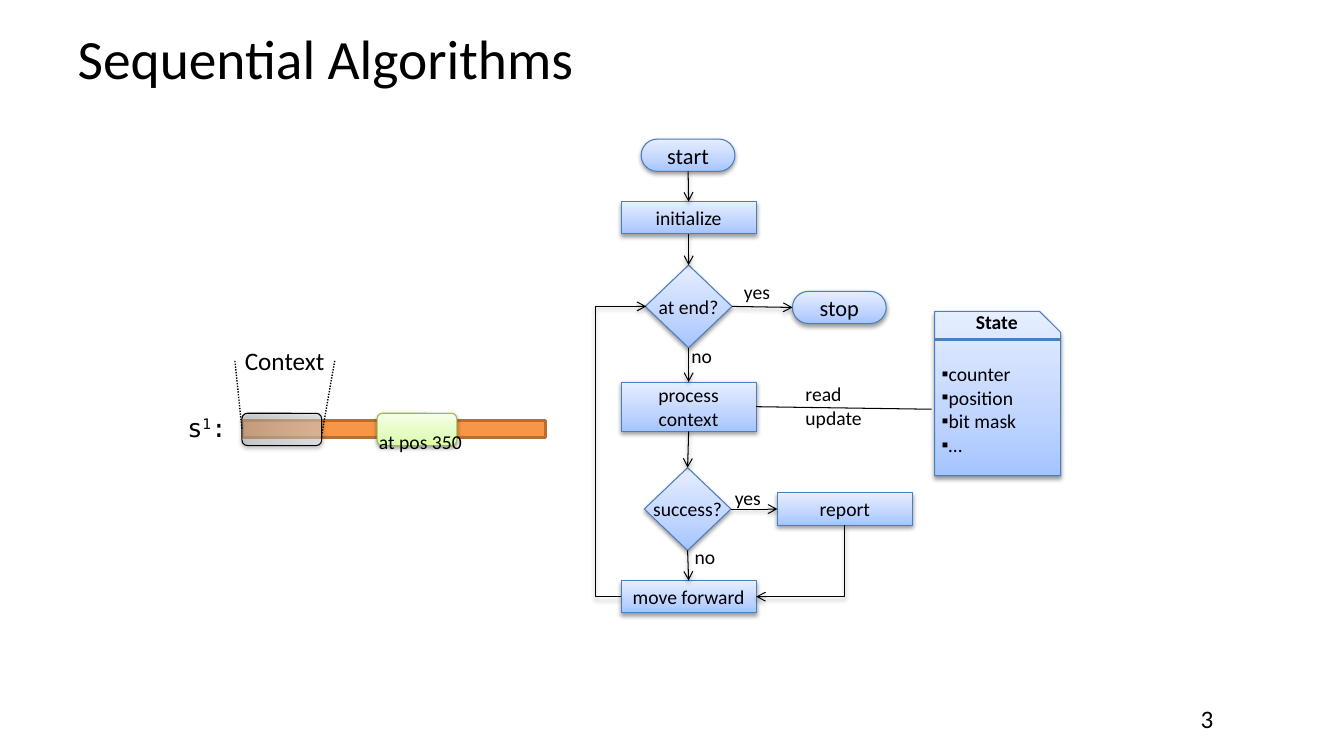
import dataclasses
import typing

import lxml.etree
import pptx
import pptx.dml.color
import pptx.enum.dml
import pptx.enum.shapes
import pptx.enum.text
import pptx.oxml.ns
import pptx.util

CELL = pptx.util.Inches(0.1)
COLOURS = {
    "ink": "000000", "edge": "4B7EBC", "bar": "F79646", "bar edge": "B76F34", "leaf edge": "98B955",
}
GRADIENTS = {
    "sky": ["A4C4FF", "BFD4FF", "E6EEFF"],
    "leaf": ["DAFDA7", "E4FCC2", "F5FFE7"],
    "grey": ["BDBDBD", "D1D1D1", "EEEEEE"],
}
STOPS = [0, 35000, 100000]
FORMS = pptx.enum.shapes.MSO_SHAPE
LINKS = pptx.enum.shapes.MSO_CONNECTOR
ANCHOR = pptx.enum.text.MSO_ANCHOR
ALIGN = pptx.enum.text.PP_ALIGN
TOP, LEFT, BOTTOM, RIGHT = range(4)
NO_INSETS = {"margin_left": 0, "margin_right": 0, "margin_top": 0, "margin_bottom": 0}


@dataclasses.dataclass
class Node:
    name: str
    form: int
    col: float
    row: float
    cols: float
    rows: float
    text: str = ""
    size: float = 14
    gradient: str = "sky"
    edge: str = "edge"
    angle: int = 90
    alpha: int = 100


@dataclasses.dataclass
class Label:
    text: str
    col: float
    row: float
    cols: float
    rows: float
    size: float = 14
    bold: bool = False
    font: str = "Calibri"


@dataclasses.dataclass
class Join:
    start: str
    start_side: int
    end: str
    end_side: int


@dataclasses.dataclass
class Line:
    start: tuple[float, float]
    end: tuple[float, float]
    colour: str = "ink"
    width: float = 0.75
    dotted: bool = False
    arrow: str = ""
    geometry: str = "line"
    bend: typing.Optional[int] = None


def grid(*cells: float) -> list[int]:
    return [round(cell * CELL) for cell in cells]


def assign(target: typing.Any, values: dict[str, typing.Any]) -> None:
    for name, value in values.items():
        setattr(target, name, value)


def rgb(code: str) -> pptx.dml.color.RGBColor:
    return pptx.dml.color.RGBColor.from_string(code)


def add_child(parent: typing.Any, tag: str, **values: typing.Any) -> typing.Any:
    attributes = {name: str(value) for name, value in values.items()}
    return lxml.etree.SubElement(parent, pptx.oxml.ns.qn(tag), attributes)


def add_shadow(effects: typing.Any) -> None:
    shadow = add_child(effects, "a:outerShdw", blurRad=40000, dist=23000, dir=5400000, rotWithShape=0)
    add_child(add_child(shadow, "a:srgbClr", val=COLOURS["ink"]), "a:alpha", val=38000)


def write(box: typing.Any, text: str, size: float, align: int, font: str = "Calibri",
          bold: bool = False, **frame_values: typing.Any) -> None:
    frame = box.text_frame
    assign(frame, {"text": text, "word_wrap": True, **frame_values})
    for para in frame.paragraphs:
        assign(para, {"alignment": align, "space_before": pptx.util.Pt(0)})
        for span in para.runs:
            assign(span.font, {"name": font, "size": pptx.util.Pt(size), "bold": bold})
            span.font.color.rgb = rgb(COLOURS["ink"])


def draw_node(page: typing.Any, node: Node) -> typing.Any:
    shape = page.shapes.add_shape(node.form, *grid(node.col, node.row, node.cols, node.rows))
    shape.fill.gradient()
    shape.fill.gradient_angle = node.angle
    stops = shape.element.find(".//" + pptx.oxml.ns.qn("a:gsLst"))
    for stop in list(stops):
        stops.remove(stop)
    for place, code in zip(STOPS, GRADIENTS[node.gradient]):
        colour = add_child(add_child(stops, "a:gs", pos=place), "a:srgbClr", val=code)
        if node.alpha < 100:
            add_child(colour, "a:alpha", val=node.alpha * 1000)
    shape.line.color.rgb = rgb(COLOURS[node.edge])
    shape.line.width = pptx.util.Pt(0.75)
    shape.shadow.inherit = False
    add_shadow(shape.element.spPr.find(pptx.oxml.ns.qn("a:effectLst")))
    if node.size == 16:
        shape.adjustments[0] = 0.5
    if node.text:
        write(shape, node.text, node.size, ALIGN.CENTER, vertical_anchor=ANCHOR.MIDDLE,
              **{**NO_INSETS, "word_wrap": False})
    return shape


def draw_label(page: typing.Any, label: Label) -> typing.Any:
    box = page.shapes.add_textbox(*grid(label.col, label.row, label.cols, label.rows))
    write(box, label.text, label.size, ALIGN.LEFT, label.font, label.bold)
    return box


def draw_line(page: typing.Any, line: Line) -> typing.Any:
    kind = LINKS.STRAIGHT if line.geometry == "line" else LINKS.ELBOW
    link = page.shapes.add_connector(kind, *grid(*line.start, *line.end))
    link.line.color.rgb = rgb(COLOURS[line.colour])
    link.line.width = pptx.util.Pt(line.width)
    if line.dotted:
        link.line.dash_style = pptx.enum.dml.MSO_LINE.ROUND_DOT
    properties = link.element.spPr
    geometry = properties.find(pptx.oxml.ns.qn("a:prstGeom"))
    geometry.set("prst", line.geometry)
    if line.bend is not None:
        add_child(geometry.find(pptx.oxml.ns.qn("a:avLst")), "a:gd", name="adj1", fmla=f"val {line.bend}")
    if line.arrow:
        add_child(properties.find(pptx.oxml.ns.qn("a:ln")), line.arrow, type="arrow")
    effects = add_child(properties, "a:effectLst")
    if line.arrow:
        add_shadow(effects)
    return link


NODES = [
    Node("context", FORMS.ROUNDED_RECTANGLE, 24, 41, 7.9, 3.2, gradient="grey", edge="ink", angle=0, alpha=50),
    Node("match", FORMS.ROUNDED_RECTANGLE, 37.4, 41, 7.9, 3.2, gradient="leaf", edge="leaf edge"),
    Node("start", FORMS.ROUNDED_RECTANGLE, 63.6, 13.8, 9.3, 3.2, "start", 16),
    Node("initialize", FORMS.RECTANGLE, 61.6, 20, 13.4, 3.2, "initialize"),
    Node("at end", FORMS.DIAMOND, 64, 26.3, 8.6, 8.2, "at end?"),
    Node("stop", FORMS.ROUNDED_RECTANGLE, 78.6, 28.9, 9.3, 3.2, "stop", 16),
    Node("process", FORMS.RECTANGLE, 61.6, 37.9, 13.4, 4.9, "process\ncontext"),
    Node("success", FORMS.DIAMOND, 63.9, 46.4, 8.6, 8.2, "success?"),
    Node("report", FORMS.RECTANGLE, 77.1, 48.9, 13.4, 3.2, "report"),
    Node("forward", FORMS.RECTANGLE, 61.6, 57.6, 13.4, 3.2, "move forward"),
    Node("state", FORMS.SNIP_1_RECTANGLE, 92.7, 30.9, 12.5, 16.3),
]
JOINS = [
    Join("start", BOTTOM, "initialize", TOP), Join("initialize", BOTTOM, "at end", TOP),
    Join("at end", RIGHT, "stop", LEFT), Join("at end", BOTTOM, "process", TOP),
    Join("process", BOTTOM, "success", TOP), Join("success", RIGHT, "report", LEFT),
    Join("success", BOTTOM, "forward", TOP),
]
LINES = [
    Line((75, 59.2), (83.8, 52.1), arrow="a:headEnd", geometry="bentConnector2"),
    Line((61.6, 59.2), (64.1, 30.4), arrow="a:tailEnd", geometry="bentConnector3", bend=-100000),
    Line((92.7, 33.7), (105.2, 33.7), "edge", 2.25),
    Line((23.3, 35.8), (24, 42.6), width=1, dotted=True),
    Line((33.2, 35.8), (31.9, 43.2), width=1, dotted=True),
]
LABELS = [
    Label("read\nupdate", 78.9, 37.4, 9.3, 5.7), Label("yes", 72.8, 27.3, 5.3, 3.4),
    Label("no", 67.6, 33.6, 5.3, 3.4), Label("yes", 71.9, 47.7, 5.3, 3.4),
    Label("no", 67.9, 53.6, 5.3, 3.4), Label("State", 95.8, 30.3, 8, 3.4, bold=True),
    Label("Context", 23.3, 33.8, 11, 4, 18), Label("at pos 350", 36.6, 42.2, 11.5, 3.4),
    Label("3", 118.1, 69.3, 12.7, 4, 18),
]


def main() -> None:
    deck = pptx.Presentation()
    assign(deck, {"slide_width": pptx.util.Inches(13.33), "slide_height": pptx.util.Inches(7.5)})
    page = deck.slides.add_slide(deck.slide_layouts[1])
    title, states = page.placeholders
    sides = ["left", "top", "width", "height"]
    assign(title, dict(zip(sides, grid(6.7, 1.7, 120, 8))))
    write(title, "Sequential Algorithms", 39.6, ALIGN.LEFT, vertical_anchor=ANCHOR.MIDDLE)

    bar = page.shapes.add_shape(FORMS.RECTANGLE, *grid(24.1, 41.7, 30, 1.7))
    bar.shadow.inherit = False
    bar.fill.solid()
    bar.fill.fore_color.rgb = rgb(COLOURS["bar"])
    bar.line.color.rgb = rgb(COLOURS["bar edge"])
    bar.line.width = pptx.util.Pt(2)
    sequence = draw_label(page, Label("s", 17.6, 40.4, 7.7, 4, 18, font="DejaVu Sans Mono"))
    para = sequence.text_frame.paragraphs[0]
    for text, baseline in [("1", 30000), (":", 0)]:
        span = para.add_run()
        span.text = text
        assign(span.font, {"name": "DejaVu Sans Mono", "size": pptx.util.Pt(18)})
        span.font.color.rgb = rgb(COLOURS["ink"])
        span.font._element.set("baseline", str(baseline))

    shapes = {node.name: draw_node(page, node) for node in NODES}
    for join in JOINS:
        link = draw_line(page, Line((0, 0), (0, 0), arrow="a:tailEnd"))
        link.begin_connect(shapes[join.start], join.start_side)
        link.end_connect(shapes[join.end], join.end_side)
    reading = draw_line(page, Line((75, 40.4), (92.4, 40.6)))
    reading.begin_connect(shapes["process"], RIGHT)
    for line in LINES:
        draw_line(page, line)

    assign(states, dict(zip(sides, grid(92.4, 35.4, 12.6, 10.4))))
    write(states, "counter\nposition\nbit mask\n…", 14, ALIGN.LEFT,
          auto_size=pptx.enum.text.MSO_AUTO_SIZE.NONE)
    for para in states.text_frame.paragraphs:
        properties = para._p.get_or_add_pPr()
        properties.set("marL", str(pptx.util.Inches(0.01)))
        properties.set("indent", str(pptx.util.Inches(-0.31)))
        add_child(properties, "a:buChar", char="▪")
    states.element.getparent().append(states.element)
    for label in LABELS:
        draw_label(page, label)
    deck.save("out.pptx")


if __name__ == "__main__":
    main()
